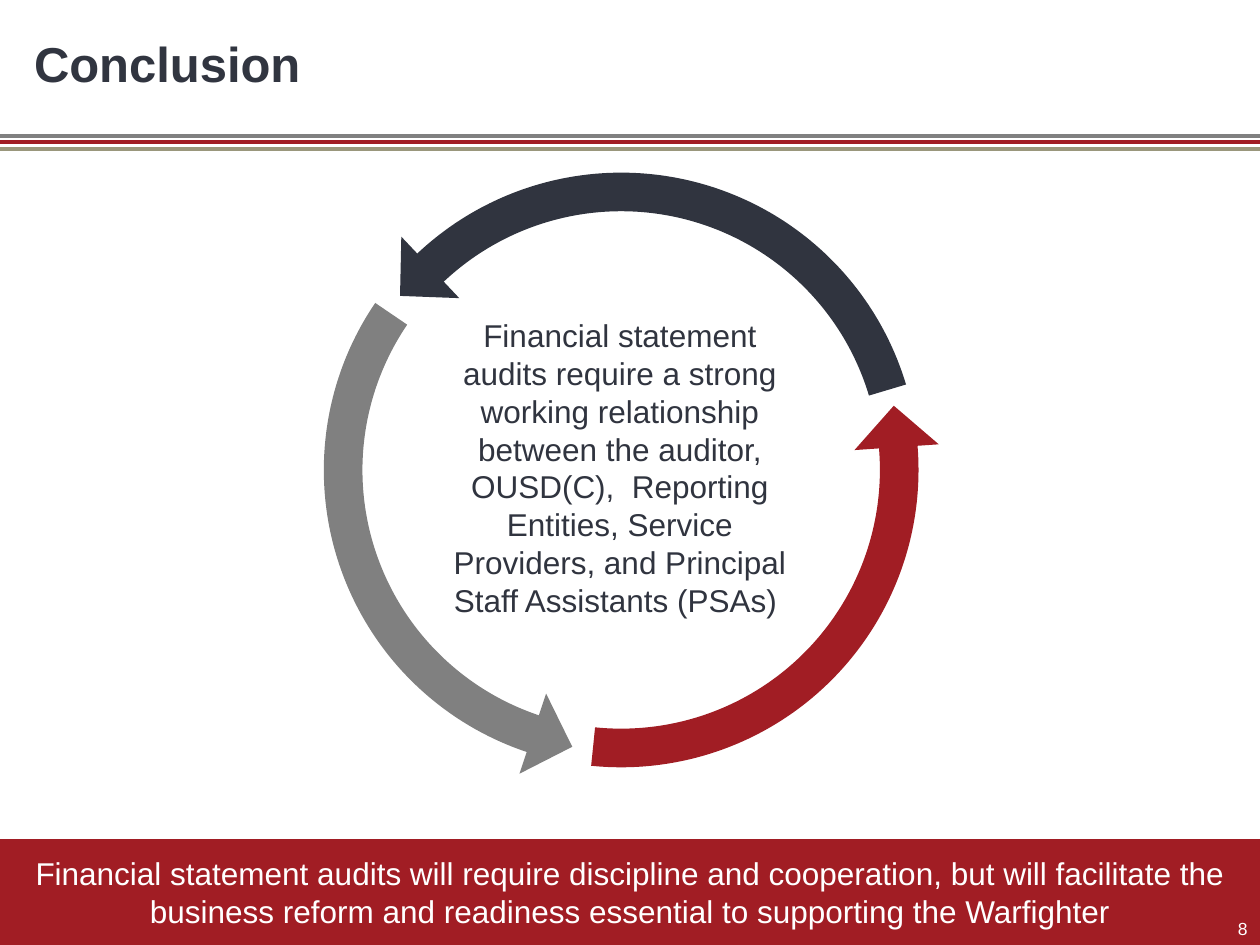
from lxml import etree
from pptx import Presentation
from pptx.dml.color import RGBColor
from pptx.enum.shapes import MSO_CONNECTOR, MSO_SHAPE
from pptx.enum.text import MSO_ANCHOR, PP_ALIGN
from pptx.oxml.ns import qn
from pptx.util import Inches, Pt

LEFT, CENTER, RIGHT = PP_ALIGN.LEFT, PP_ALIGN.CENTER, PP_ALIGN.RIGHT
TOP, MIDDLE, BOTTOM = MSO_ANCHOR.TOP, MSO_ANCHOR.MIDDLE, MSO_ANCHOR.BOTTOM
RECT, ARC, TRIANGLE = MSO_SHAPE.RECTANGLE, MSO_SHAPE.BLOCK_ARC, MSO_SHAPE.ISOSCELES_TRIANGLE
STRAIGHT = MSO_CONNECTOR.STRAIGHT

NAVY = RGBColor(0x30, 0x34, 0x3F)
TITLE_NAVY = RGBColor(0x31, 0x35, 0x40)
RED = RGBColor(0xA1, 0x1D, 0x24)
GRAY = RGBColor(0x80, 0x80, 0x80)
TAN = RGBColor(0x9A, 0x97, 0x7C)
WHITE = RGBColor(0xFF, 0xFF, 0xFF)

RING = (2.57, 1.37, 4.72, 4.72)
RING_END = 343.29
RING_THICKNESS = 0.065
HEAD_SIZE = (0.67, 0.33)


class SlideBuilder:
    font = "Arial"

    def __init__(self, s):
        self.s = s

    def add_run(self, shape, text, size, color, align=LEFT, anchor=TOP, bold=False):
        tf = shape.text_frame
        tf.word_wrap = True
        tf.vertical_anchor = anchor
        p = tf.paragraphs[0]
        p.alignment = align
        r = p.add_run()
        r.text = text
        r.font.name, r.font.size, r.font.bold = self.font, Pt(size), bold
        r.font.color.rgb = color

    def title(self, text, left, top, width, height):
        sp = self.s.shapes.title
        sp.left, sp.top = Inches(left), Inches(top)
        sp.width, sp.height = Inches(width), Inches(height)
        self.add_run(sp, text, 28, TITLE_NAVY, anchor=MIDDLE, bold=True)

    def text(self, box, text, size, color, align, anchor=TOP):
        sp = self.s.shapes.add_textbox(*map(Inches, box))
        self.add_run(sp, text, size, color, align, anchor)

    def shape(self, kind, box, color, rotation=0):
        sp = self.s.shapes.add_shape(kind, *map(Inches, box))
        sp.shadow.inherit = False
        sp.fill.solid()
        sp.fill.fore_color.rgb = color
        sp.line.fill.background()
        sp.rotation = rotation
        return sp

    def arc(self, color, rotation, start):
        sp = self.shape(ARC, RING, color, rotation)
        # One degree is 60000 units, and an adjustment of 1 is 100000 units.
        sp.adjustments[0] = start * 0.6
        sp.adjustments[1] = RING_END * 0.6
        sp.adjustments[2] = RING_THICKNESS

    def rule(self, y, color):
        line = self.s.shapes.add_connector(
            STRAIGHT, Inches(0), Inches(y), Inches(10), Inches(y))
        line.line.color.rgb = color
        line.line.width = Pt(2.25)
        etree.SubElement(line._element.spPr, qn("a:effectLst"))


def main():
    prs = Presentation()
    prs.slide_width, prs.slide_height = Inches(10), Inches(7.5)
    b = SlideBuilder(prs.slides.add_slide(prs.slide_layouts[5]))

    for i, color in enumerate((GRAY, RED, TAN)):
        b.rule(1.08 + 0.05 * i, color)

    banner = b.shape(RECT, (0, 6.66, 10, 0.84), RED)
    b.add_run(banner, "Financial statement audits will require discipline and cooperation, "
              "but will facilitate the business reform and readiness essential to "
              "supporting the Warfighter", 18, WHITE, CENTER, MIDDLE)

    b.title("Conclusion", 0.17, 0, 8.17, 1)
    b.text((7.67, 7.1, 2.33, 0.4), "8", 10, WHITE, RIGHT, BOTTOM)
    b.text((3.49, 2.46, 2.86, 2.52),
           "Financial statement audits require a strong working relationship between "
           "the auditor, OUSD(C),  Reporting Entities, Service Providers, and "
           "Principal Staff Assistants (PSAs) ", 18, NAVY, CENTER)

    for color, rotation, start in ((GRAY, 230.9, 236.42), (RED, 112.5, 242.25),
                                   (NAVY, 0, 226.21)):
        b.arc(color, rotation, start)
    for color, left, top, rotation in ((RED, 6.77, 3.22, 356.1), (NAVY, 2.96, 2.07, 226.7),
                                       (GRAY, 4.05, 5.71, 108.4)):
        b.shape(TRIANGLE, (left, top, *HEAD_SIZE), color, rotation)

    prs.save("out.pptx")


if __name__ == "__main__":
    main()
